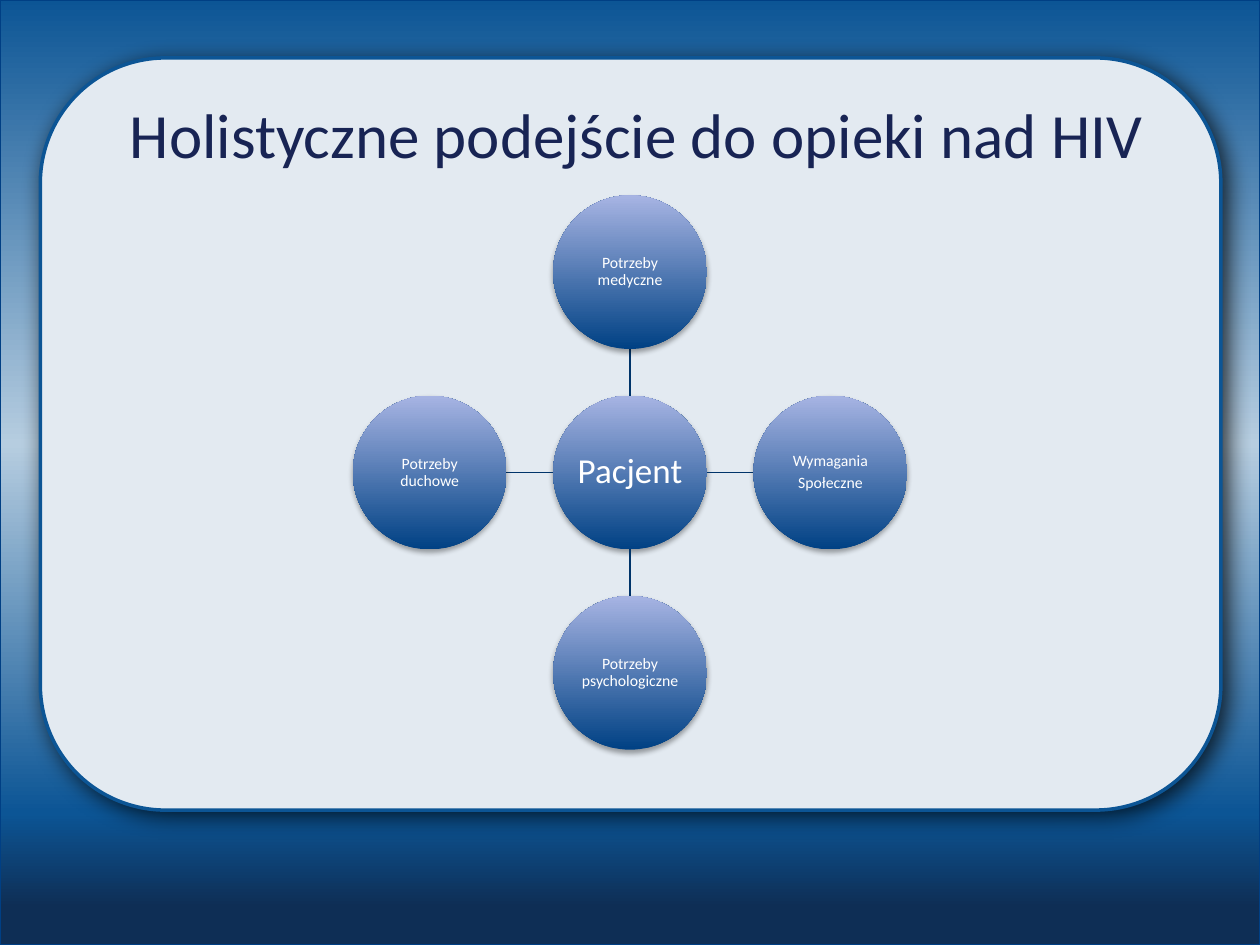
import pptx
import pptx.util
import pptx.dml.color
import pptx.enum.shapes
import pptx.enum.text
import pptx.oxml
import pptx.oxml.ns

Inches = pptx.util.Inches
Pt = pptx.util.Pt
KIND = pptx.enum.shapes.MSO_SHAPE
TEXT = pptx.enum.text

INK = {
    "frame": "0C5595", "edge": "003F84", "glow": "B6CDE0", "night": "0E2E55",
    "panel": "E3EAF1", "deep": "004184", "pale": "A7B4E3", "link": "00346A",
    "title": "182454", "white": "FFFFFF", "black": "000000",
}
SOFT = {"alpha": 35, "blur": 3.1, "dist": 1.8, "turn": 90}
HARD = {"alpha": 75, "blur": 13, "dist": 4, "turn": 45}

# Circle layout: a hub with four spokes at an equal step
HUB = (5, 3.75)
STEP = 1.59
SIZE = 1.22
NEEDS = [
    ((0, -1), ["Potrzeby medyczne"]),
    ((1, 0), ["Wymagania", "Społeczne"]),
    ((0, 1), ["Potrzeby psychologiczne"]),
    ((-1, 0), ["Potrzeby duchowe"]),
]


def tint(name):
    return pptx.dml.color.RGBColor.from_string(INK[name])


def apply(item, values):
    for key, value in values.items():
        setattr(item, key, value)


def node(tag, **attrs):
    item = pptx.oxml.parse_xml(f"<a:{tag} {pptx.oxml.ns.nsdecls('a')}/>")
    for key, value in attrs.items():
        item.set(key, str(value))
    return item


def color(name, alpha=None):
    item = node("srgbClr", val=INK[name])
    if alpha is not None:
        item.append(node("alpha", val=alpha * 1000))
    return item


def blend(shape, stops, angle):
    shape.fill.gradient()
    shape.fill.gradient_angle = angle
    ramp = shape.element.spPr.find(".//" + pptx.oxml.ns.qn("a:gsLst"))
    for old in list(ramp):
        ramp.remove(old)
    for place, name in stops:
        stop = node("gs", pos=place * 1000)
        stop.append(color(name))
        ramp.append(stop)


def shade(shape, look):
    shape.shadow.inherit = False
    cast = node("outerShdw", blurRad=Pt(look["blur"]), dist=Pt(look["dist"]),
                dir=look["turn"] * 60000, algn="ctr", rotWithShape=0)
    cast.append(color("black", look["alpha"]))
    shape.element.spPr.find(pptx.oxml.ns.qn("a:effectLst")).append(cast)


def rule(line, name, width):
    line.color.rgb = tint(name)
    line.width = Pt(width)


def block(slide, kind, box, look):
    shape = slide.shapes.add_shape(kind, *map(Inches, box))
    shade(shape, look)
    return shape


def style(para, size, name, **values):
    apply(para, values)
    apply(para.font, {"size": Pt(size), "name": "Calibri"})
    para.font.color.rgb = tint(name)


def circle(slide, mid, lines, size):
    box = (mid[0] - SIZE / 2, mid[1] - SIZE / 2, SIZE, SIZE)
    disc = block(slide, KIND.OVAL, box, SOFT)
    blend(disc, [(0, "deep"), (100, "pale")], 90)
    disc.line.fill.background()
    frame = disc.text_frame
    sides = ("left", "top", "right", "bottom")
    apply(frame, {f"margin_{side}": Inches(0.01) for side in sides})
    apply(frame, {"word_wrap": True, "vertical_anchor": TEXT.MSO_ANCHOR.MIDDLE})
    frame.text = "\n".join(lines)
    for para in frame.paragraphs:
        style(para, size, "white", alignment=TEXT.PP_ALIGN.CENTER,
              line_spacing=0.9, space_after=Pt(0.35 * size))


def spoke(slide, way):
    ends = [HUB[axis] + way[axis] * reach
            for reach in (SIZE / 2, STEP - SIZE / 2) for axis in (0, 1)]
    line = slide.shapes.add_connector(
        pptx.enum.shapes.MSO_CONNECTOR.STRAIGHT, *map(Inches, ends))
    rule(line.line, "link", 0.75)
    line.element.spPr.append(node("effectLst"))


def back(slide):
    wall = block(slide, KIND.RECTANGLE, (0, 0, 10, 7.5), SOFT)
    blend(wall, [(0, "frame"), (47, "glow"), (86, "frame"),
                 (96, "night"), (100, "night")], 270)
    rule(wall.line, "edge", 0.75)
    panel = block(slide, KIND.ROUNDED_RECTANGLE, (0.32, 0.46, 9.37, 5.97), HARD)
    panel.fill.solid()
    panel.fill.fore_color.rgb = tint("panel")
    rule(panel.line, "frame", 2)


def head(slide, words):
    title = slide.shapes.title
    box = dict(zip(("left", "top", "width", "height"),
                   map(Inches, (0.93, 0.71, 8.42, 0.71))))
    apply(title, box)
    frame = title.text_frame
    frame.text = words
    apply(frame, {"word_wrap": True, "vertical_anchor": TEXT.MSO_ANCHOR.TOP,
                  "auto_size": TEXT.MSO_AUTO_SIZE.SHAPE_TO_FIT_TEXT})
    style(frame.paragraphs[0], 36, "title", alignment=TEXT.PP_ALIGN.LEFT)
    # Bring the title in front of the panel
    slide.shapes.element.append(title.element)


def main():
    deck = pptx.Presentation()
    apply(deck, {"slide_width": Inches(10), "slide_height": Inches(7.5)})
    slide = deck.slides.add_slide(deck.slide_layouts[5])
    back(slide)
    # Hub and spokes
    circle(slide, HUB, ["Pacjent"], 20)
    for way, lines in NEEDS:
        spoke(slide, way)
        mid = [HUB[axis] + way[axis] * STEP for axis in (0, 1)]
        circle(slide, mid, lines, 9)
    head(slide, "Holistyczne podejście do opieki nad HIV")
    deck.save("out.pptx")


if __name__ == "__main__":
    main()
